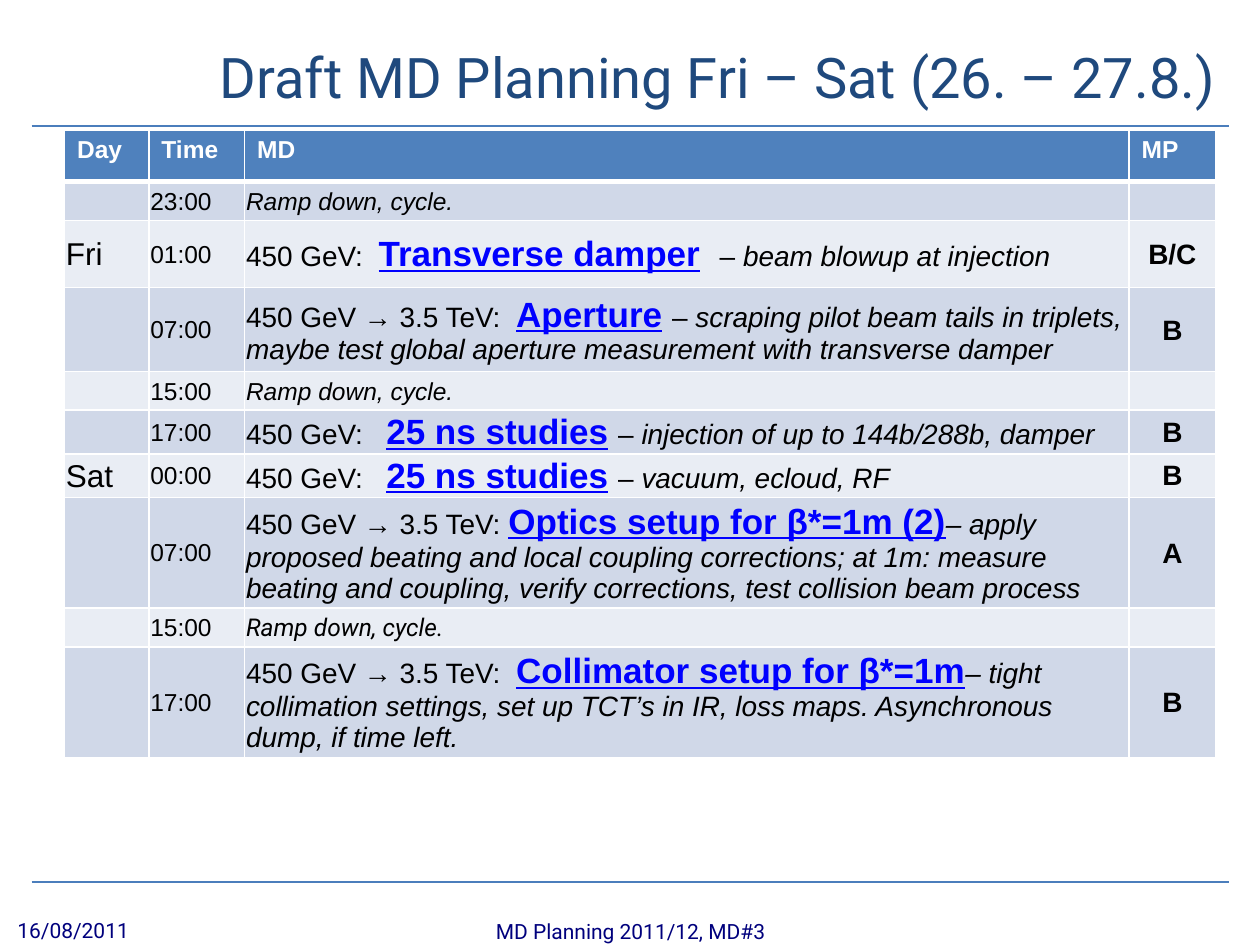
import pptx
import pptx.dml.color
import pptx.enum.shapes
import pptx.enum.text
import pptx.oxml
import pptx.oxml.ns
import pptx.util
from pptx.util import Cm

RGBColor = pptx.dml.color.RGBColor
ALIGN = pptx.enum.text.PP_ALIGN
ANCHOR = pptx.enum.text.MSO_ANCHOR

TITLE_BLUE = RGBColor(0x1F, 0x49, 0x7D)
RULE_BLUE = RGBColor(0x4B, 0x7E, 0xBC)
HEADER_BLUE = RGBColor(0x4F, 0x81, 0xBD)
BAND_DARK = RGBColor(0xD0, 0xD8, 0xE8)
BAND_LIGHT = RGBColor(0xE9, 0xED, 0xF4)
LINK_BLUE = RGBColor(0x00, 0x00, 0xFF)
FOOTER_NAVY = RGBColor(0x00, 0x00, 0x7D)
BLACK = RGBColor(0x00, 0x00, 0x00)
WHITE = RGBColor(0xFF, 0xFF, 0xFF)

FORMATS = {
    "title": {"name": "Roboto", "size": 32, "color": TITLE_BLUE},
    "footer": {"name": "Roboto", "size": 12, "color": FOOTER_NAVY},
    "header": {"size": 14, "color": WHITE, "bold": True},
    "day": {"size": 18},
    "time": {"size": 14},
    "cycle": {"size": 14, "italic": True},
    "cycle_roboto": {"name": "Roboto", "size": 14, "italic": True},
    "energy": {"size": 16},
    "study": {"size": 20, "color": LINK_BLUE, "bold": True, "underline": True},
    "gap": {"size": 20},
    "note": {"size": 16, "italic": True},
    "priority": {"size": 16, "bold": True},
}


def add_spans(para, spans):
    """Append (text, format name) pairs to a paragraph as runs."""
    for text, format_name in spans:
        span = para.add_run()
        span.text = text
        values = {"name": "Arial", "color": BLACK, **FORMATS[format_name]}
        span.font.color.rgb = values.pop("color")
        values["size"] = pptx.util.Pt(values["size"])
        for attribute, value in values.items():
            setattr(span.font, attribute, value)


def add_border(cell, side, points):
    line = pptx.oxml.parse_xml(
        f'<a:{side} {pptx.oxml.ns.nsdecls("a")} w="{points * 12700}">'
        f'<a:solidFill><a:srgbClr val="{WHITE}"/></a:solidFill></a:{side}>')
    cell._tc.get_or_add_tcPr().append(line)


deck = pptx.Presentation()
deck.slide_width, deck.slide_height = Cm(25.4), Cm(19.05)
page = deck.slides.add_slide(deck.slide_layouts[6])

# Rules below the title and above the footer
for top in (2.54, 17.78):
    rule = page.shapes.add_connector(
        pptx.enum.shapes.MSO_CONNECTOR.STRAIGHT, Cm(0.64), Cm(top), Cm(24.77), Cm(top))
    rule.line.color.rgb = RULE_BLUE
    rule.line.width = pptx.util.Pt(1.5)
    rule._element.spPr.append(
        pptx.oxml.parse_xml(f'<a:effectLst {pptx.oxml.ns.nsdecls("a")}/>'))

# Title and footer
for text, format_name, align, left, top, width, height in (
    ("Draft MD Planning Fri – Sat (26. – 27.8.)", "title", ALIGN.RIGHT, 2.54, 0.43, 22.23, 2.21),
    ("MD Planning 2011/12, MD#3", "footer", ALIGN.CENTER, 8.69, 18.42, 8.05, 0.71),
    ("16/08/2011", "footer", ALIGN.LEFT, 0.1, 18.39, 5.92, 0.74),
):
    box = page.shapes.add_textbox(Cm(left), Cm(top), Cm(width), Cm(height))
    box.text_frame.word_wrap = True
    box.text_frame.vertical_anchor = ANCHOR.MIDDLE
    para = box.text_frame.paragraphs[0]
    para.alignment = align
    add_spans(para, [(text, format_name)])

# Schedule: row height, day, time, description, priority
RAMP_DOWN = [("Ramp down, cycle.", "cycle")]
schedule = [
    (0.78, "", "23:00", RAMP_DOWN, ""),
    (1.36, "Fri", "01:00", [
        ("450 GeV:  ", "energy"), ("Transverse damper", "study"), ("  ", "gap"),
        ("– ", "energy"), ("beam blowup at injection", "note")], "B/C"),
    (1.69, "", "07:00", [
        ("450 GeV → 3.5 TeV:  ", "energy"), ("Aperture", "study"), (" ", "gap"),
        ("– ", "energy"),
        ("scraping pilot beam tails in triplets, maybe test global aperture "
         "measurement with transverse damper", "note")], "B"),
    (0.78, "", "15:00", RAMP_DOWN, ""),
    (0.83, "", "17:00", [
        ("450 GeV:   ", "energy"), ("25 ns studies", "study"), (" ", "gap"),
        ("– ", "energy"), ("injection of up to 144b/288b, damper", "note")], "B"),
    (0.83, "Sat", "00:00", [
        ("450 GeV:   ", "energy"), ("25 ns studies", "study"), (" ", "gap"),
        ("– ", "energy"), ("vacuum, ecloud, RF", "note")], "B"),
    (2.08, "", "07:00", [
        ("450 GeV → 3.5 TeV: ", "energy"), ("Optics setup for β*=1m (2)", "study"),
        ("– apply proposed beating and local coupling corrections; at 1m: measure "
         "beating and coupling, verify corrections, test collision beam process", "note")], "A"),
    (0.78, "", "15:00", [("Ramp down, cycle.", "cycle_roboto")], ""),
    (2.06, "", "17:00", [
        ("450 GeV → 3.5 TeV:  ", "energy"), ("Collimator setup for β*=1m", "study"),
        ("– tight collimation settings, set up TCT’s in IR, loss maps. "
         "Asynchronous dump, if time left.", "note")], "B"),
]
rows = [(1.04, [[(label, "header")] for label in ("Day", "Time", "MD", "MP")])]
for height, day, time, description, priority in schedule:
    rows.append((height, [
        [(day, "day")] if day else [],
        [(time, "time")],
        description,
        [(priority, "priority")] if priority else [],
    ]))

column_widths = (1.7, 1.93, 17.83, 1.75)
table = page.shapes.add_table(
    len(rows), len(column_widths), Cm(1.3), Cm(2.62),
    Cm(sum(column_widths)), Cm(sum(height for height, _ in rows))).table
for column, width in zip(table.columns, column_widths):
    column.width = Cm(width)

for row_index, (height, contents) in enumerate(rows):
    table.rows[row_index].height = Cm(height)
    for column_index, spans in enumerate(contents):
        cell = table.cell(row_index, column_index)
        borders = {"lnL": 1, "lnR": 1, "lnT": 3 if row_index == 1 else 1,
                   "lnB": 3 if row_index == 0 else 1}
        for side, points in borders.items():
            add_border(cell, side, points)
        cell.fill.solid()
        para = cell.text_frame.paragraphs[0]
        if row_index == 0:
            cell.fill.fore_color.rgb = HEADER_BLUE
        else:
            cell.fill.fore_color.rgb = BAND_DARK if row_index % 2 else BAND_LIGHT
            cell.vertical_anchor = ANCHOR.MIDDLE
            cell.margin_left = cell.margin_right = cell.margin_top = Cm(0.03)
            cell.margin_bottom = 0
            if column_index == 3:
                para.alignment = ALIGN.CENTER
        if spans:
            add_spans(para, spans)
        else:
            # Keeps an empty cell from stretching its row
            para._p.get_or_add_endParaRPr().set("sz", "1400")

deck.save("out.pptx")
